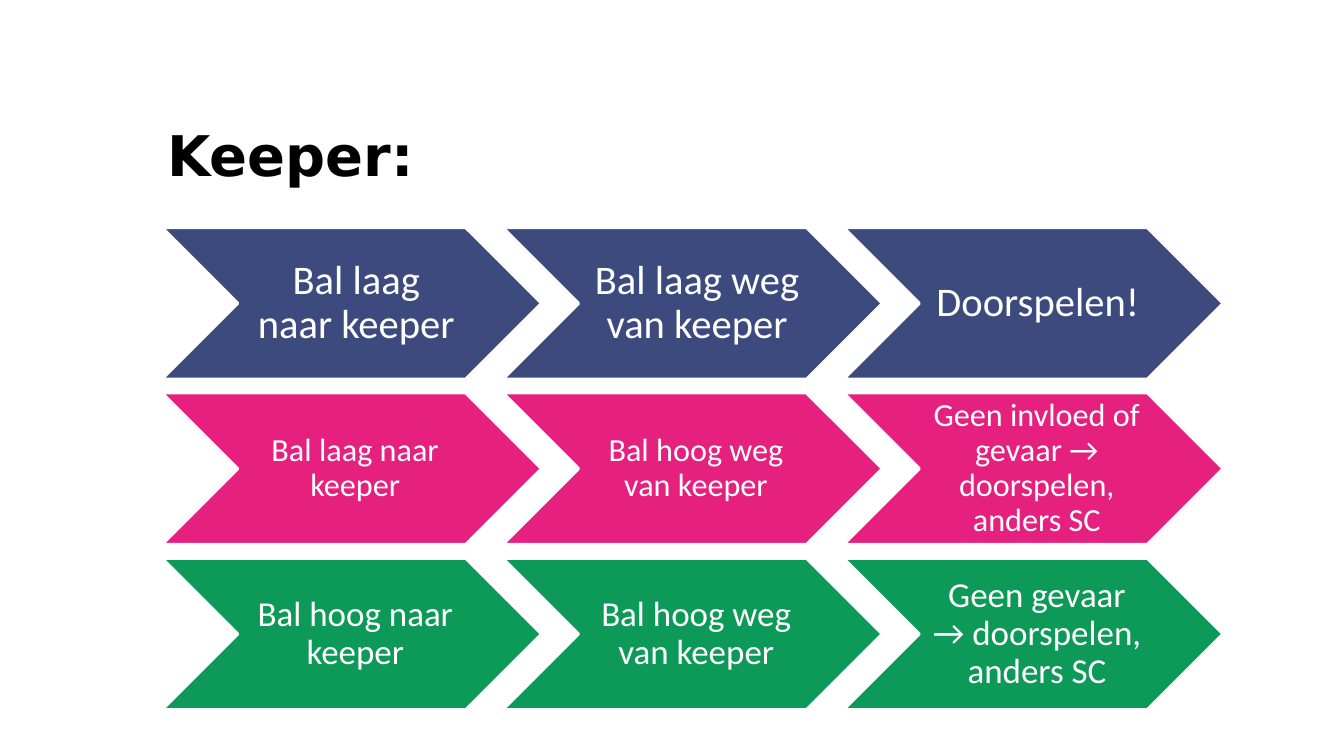
from dataclasses import dataclass

import pptx
import pptx.dml.color
import pptx.enum.shapes
import pptx.enum.text
import pptx.oxml
import pptx.oxml.ns
import pptx.util
from pptx.util import Inches


@dataclass(frozen=True)
class Theme:
    title_font: str = "DejaVu Sans"
    body_font: str = "Calibri"
    title_size: int = 40
    black: str = "000000"
    white: str = "FFFFFF"
    navy: str = "293770"
    pink: str = "E40870"
    green: str = "0D9958"
    large: int = 29
    small: int = 23
    medium: int = 25
    outline: int = 2
    line_spacing: float = 0.9


@dataclass(frozen=True)
class ChevronRow:
    color: str
    opacity: int
    size: int
    left_inset: float
    inset: float
    labels: tuple


THEME = Theme()
LEFT, TOP = 1.61, 2.26
CHEVRON_WIDTH, CHEVRON_HEIGHT = 3.76, 1.5
COLUMN_STEP, ROW_STEP = 3.38, 1.64

ROWS = (
    ChevronRow(THEME.navy, 90, THEME.large, 0.13, 0.04,
               ("Bal laag naar keeper", "Bal laag weg van keeper", "Doorspelen!")),
    ChevronRow(THEME.pink, 90, THEME.small, 0.1, 0.03,
               ("Bal laag naar keeper", "Bal hoog weg van keeper",
                "Geen invloed of gevaar → doorspelen, anders SC")),
    ChevronRow(THEME.green, 100, THEME.medium, 0.11, 0.04,
               ("Bal hoog naar keeper", "Bal hoog weg van keeper",
                "Geen gevaar → doorspelen, anders SC")),
)


def rgb(color):
    return pptx.dml.color.RGBColor.from_string(color)


def set_text(shape, text, font, size, color, left_inset, inset, align, bold=False):
    frame = shape.text_frame
    frame.word_wrap = True
    frame.vertical_anchor = pptx.enum.text.MSO_ANCHOR.MIDDLE
    frame.margin_left = Inches(left_inset)
    frame.margin_top = frame.margin_right = frame.margin_bottom = Inches(inset)
    paragraph = frame.paragraphs[0]
    paragraph.text = text
    paragraph.alignment = align
    paragraph.line_spacing = THEME.line_spacing
    paragraph.font.name = font
    paragraph.font.size = pptx.util.Pt(size)
    paragraph.font.bold = bold
    paragraph.font.color.rgb = rgb(color)


def set_opacity(shape, percent):
    color = shape.fill._xPr.find(".//" + pptx.oxml.ns.qn("a:srgbClr"))
    alpha = pptx.oxml.parse_xml(
        f'<a:alpha {pptx.oxml.ns.nsdecls("a")} val="{percent * 1000}"/>')
    color.append(alpha)


def add_title(slide, text):
    title = slide.shapes.add_textbox(
        Inches(LEFT), Inches(1.15), Inches(10.5), Inches(0.85))
    set_text(title, text, THEME.title_font, THEME.title_size, THEME.black,
             0.05, 0.05, pptx.enum.text.PP_ALIGN.LEFT, bold=True)


def add_chevron(slide, left, top, label, row):
    chevron = slide.shapes.add_shape(
        pptx.enum.shapes.MSO_SHAPE.CHEVRON, Inches(left), Inches(top),
        Inches(CHEVRON_WIDTH), Inches(CHEVRON_HEIGHT))
    chevron.shadow.inherit = False
    chevron.fill.solid()
    chevron.fill.fore_color.rgb = rgb(row.color)
    if row.opacity < 100:
        set_opacity(chevron, row.opacity)
    chevron.line.color.rgb = rgb(THEME.white)
    chevron.line.width = pptx.util.Pt(THEME.outline)
    set_text(chevron, label, THEME.body_font, row.size, THEME.white,
             row.left_inset, row.inset, pptx.enum.text.PP_ALIGN.CENTER)


def main():
    presentation = pptx.Presentation()
    presentation.slide_width = Inches(13.33)
    presentation.slide_height = Inches(7.5)
    slide = presentation.slides.add_slide(presentation.slide_layouts[6])
    add_title(slide, "Keeper:")
    for row_index, row in enumerate(ROWS):
        for column_index, label in enumerate(row.labels):
            add_chevron(slide, LEFT + column_index * COLUMN_STEP,
                        TOP + row_index * ROW_STEP, label, row)
    presentation.save("out.pptx")


if __name__ == "__main__":
    main()
